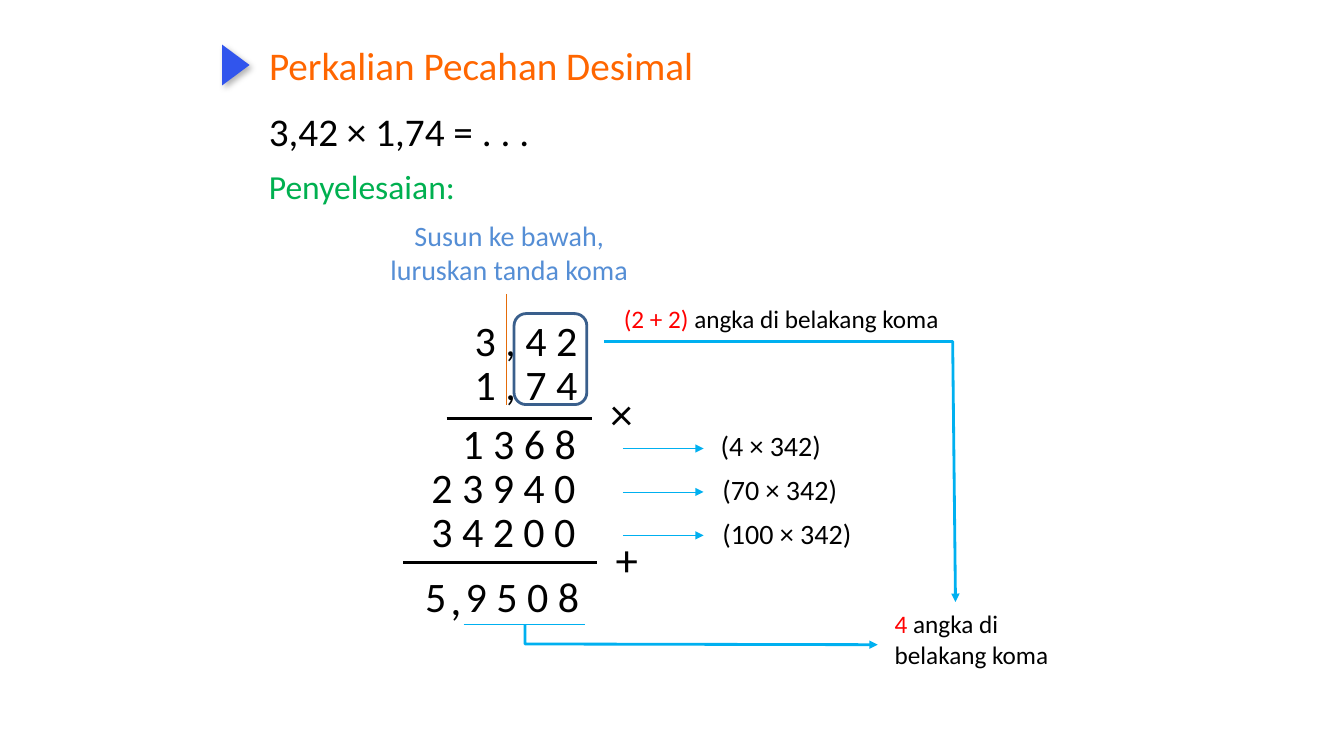
"""Build a slide on multiplying decimal fractions."""
from dataclasses import dataclass

from lxml.etree import SubElement
from pptx import Presentation
from pptx.dml.color import RGBColor
from pptx.enum.shapes import MSO_CONNECTOR as Conn, MSO_SHAPE as Geo
from pptx.enum.text import MSO_ANCHOR as Anchor, MSO_AUTO_SIZE as Fit, PP_ALIGN as Align
from pptx.oxml.ns import qn
from pptx.util import Pt

BLACK, RED, SKY = "000000", "FF0000", "00B0F0"
Point = tuple[float, float]


@dataclass
class Label:
    left: float
    top: float
    width: float
    height: float
    text: str
    size: float
    color: str = BLACK
    lead: str = ""
    wrap: bool = False
    align: Align = Align.LEFT


@dataclass
class Rule:
    start: Point
    end: Point
    color: str
    width: float
    arrow: bool = False


def hue(code: str) -> RGBColor:
    return RGBColor.from_string(code)


def write(frame, label: Label) -> None:
    para = frame.paragraphs[0]
    para.text = label.lead or label.text
    para.alignment = label.align
    if label.lead:
        para.add_run().text = label.text
    for run in para.runs:
        run.font.name = "Calibri"
        run.font.size = Pt(label.size)
        run.font.color.rgb = hue(label.color)
    if label.lead:
        para.runs[0].font.color.rgb = hue(RED)


def place(shape, label: Label) -> None:
    shape.left, shape.top = Pt(label.left), Pt(label.top)
    shape.width, shape.height = Pt(label.width), Pt(label.height)


def add_label(shapes, label: Label) -> None:
    box = shapes.add_textbox(0, 0, 0, 0)
    frame = box.text_frame
    frame.word_wrap = label.wrap
    frame.auto_size = Fit.SHAPE_TO_FIT_TEXT
    write(frame, label)
    place(box, label)


def add_title(shapes, label: Label) -> None:
    title = shapes.title
    place(title, label)
    frame = title.text_frame
    frame.auto_size = Fit.NONE
    frame.word_wrap = label.wrap
    frame.vertical_anchor = Anchor.MIDDLE
    write(frame, label)
    frame.paragraphs[0].line_spacing = 0.9


def stroke(line, color: str, width: float, arrow: bool = False) -> None:
    line.color.rgb = hue(color)
    line.width = Pt(width)
    if arrow:
        SubElement(line._get_or_add_ln(), qn("a:tailEnd"), type="triangle")


def add_rule(shapes, rule: Rule) -> None:
    ends = [Pt(n) for n in rule.start + rule.end]
    conn = shapes.add_connector(Conn.STRAIGHT, *ends)
    stroke(conn.line, rule.color, rule.width, rule.arrow)
    SubElement(conn._element.spPr, qn("a:effectLst"))


def add_bend(shapes, points: list[Point]) -> None:
    first, *rest = [(Pt(x), Pt(y)) for x, y in points]
    pen = shapes.build_freeform(*first)
    pen.add_line_segments(rest, close=False)
    bend = pen.convert_to_shape()
    bend.fill.background()
    stroke(bend.line, SKY, 2, True)
    bend.shadow.inherit = False


def add_frame(shapes) -> None:
    frame = shapes.add_shape(Geo.ROUNDED_RECTANGLE, Pt(367.2), Pt(224), Pt(52), Pt(65))
    frame.fill.background()
    stroke(frame.line, "3A5F8C", 2)
    frame.shadow.inherit = False


def add_mark(shapes) -> None:
    mark = shapes.add_shape(Geo.ISOSCELES_TRIANGLE, Pt(154), Pt(36.7), Pt(29), Pt(19.5))
    mark.rotation = 90
    mark.fill.solid()
    mark.fill.fore_color.rgb = hue("3155ED")
    mark.line.fill.background()
    mark.shadow.inherit = False
    glow = SubElement(mark._element.spPr.find(qn("a:effectLst")), qn("a:outerShdw"),
                      blurRad=str(Pt(4.5)), dist=str(Pt(2.6)),
                      dir=str(53 * 60000), rotWithShape="0")
    tint = SubElement(glow, qn("a:srgbClr"), val=BLACK)
    SubElement(tint, qn("a:alpha"), val="30000")


TITLE = Label(185, 21, 346, 55, "Perkalian Pecahan Desimal", 28, "FF6600", wrap=True)
KOMA = "angka di belakang koma"
LABELS = [
    Label(185, 73, 206, 41, "3,42 × 1,74 = . . .", 28),
    Label(185, 115, 149, 36, "Penyelesaian:", 24, "00B050"),
    Label(264, 152.5, 199.5, 55.5, "Susun ke bawah, luruskan tanda koma", 20, "558ED5",
          wrap=True, align=Align.CENTER),
    Label(429, 272, 31, 46, "×", 32),
    Label(432.7, 376, 31, 46, "+", 32),
    Label(314.6, 404, 31, 46, ",", 32),
    Label(438.5, 213, 242, 29, KOMA, 18, lead="(2 + 2) "),
    Label(632, 431.3, 134.6, 51, KOMA, 18, lead="4 ", wrap=True),
]
DIGITS = [
    ("3 , 4 2", 332, 221, 88.5), ("1 , 7 4", 332, 252.7, 88.5),
    ("1 3 6 8", 323.3, 295, 96.5), ("2 3 9 4 0", 301, 326.3, 119),
    ("3 4 2 0 0", 301, 357.8, 119),
    ("5", 296.6, 404, 30), ("9 5 0 8", 325.5, 404, 96.5),
]
NOTES = [("(4 × 342)", 507.6, 88.6), ("(70 × 342)", 509, 98.6), ("(100 × 342)", 509, 108.7)]
RULES = [
    Rule((319, 298.8), (422.6, 298.8), BLACK, 2.25),
    Rule((288, 401.8), (426.2, 401.8), BLACK, 2.25),
    Rule((331.2, 445.9), (417.6, 445.9), SKY, 0.25),
    Rule((361.5, 210), (361.5, 289.5), "E46C0A", 0.75),
]
BENDS = [
    [(431.5, 244), (680.5, 244), (682.5, 430)],
    [(375, 446), (375, 460), (627, 460.5)],
]


def main() -> None:
    deck = Presentation()
    deck.slide_width, deck.slide_height = Pt(960), Pt(540)
    shapes = deck.slides.add_slide(deck.slide_layouts[5]).shapes
    add_title(shapes, TITLE)
    add_mark(shapes)
    for label in LABELS:
        add_label(shapes, label)
    for text, left, top, width in DIGITS:
        add_label(shapes, Label(left, top, width, 44, text, 30))
    for row, (text, left, width) in enumerate(NOTES):
        add_label(shapes, Label(left, 302.7 + 31.2 * row, width, 31.5, text, 20))
        level = 320.4 + 31 * row
        add_rule(shapes, Rule((445, level), (502.6, level), SKY, 0.25, True))
    add_frame(shapes)
    for rule in RULES:
        add_rule(shapes, rule)
    for points in BENDS:
        add_bend(shapes, points)
    deck.save("out.pptx")


if __name__ == "__main__":
    main()
